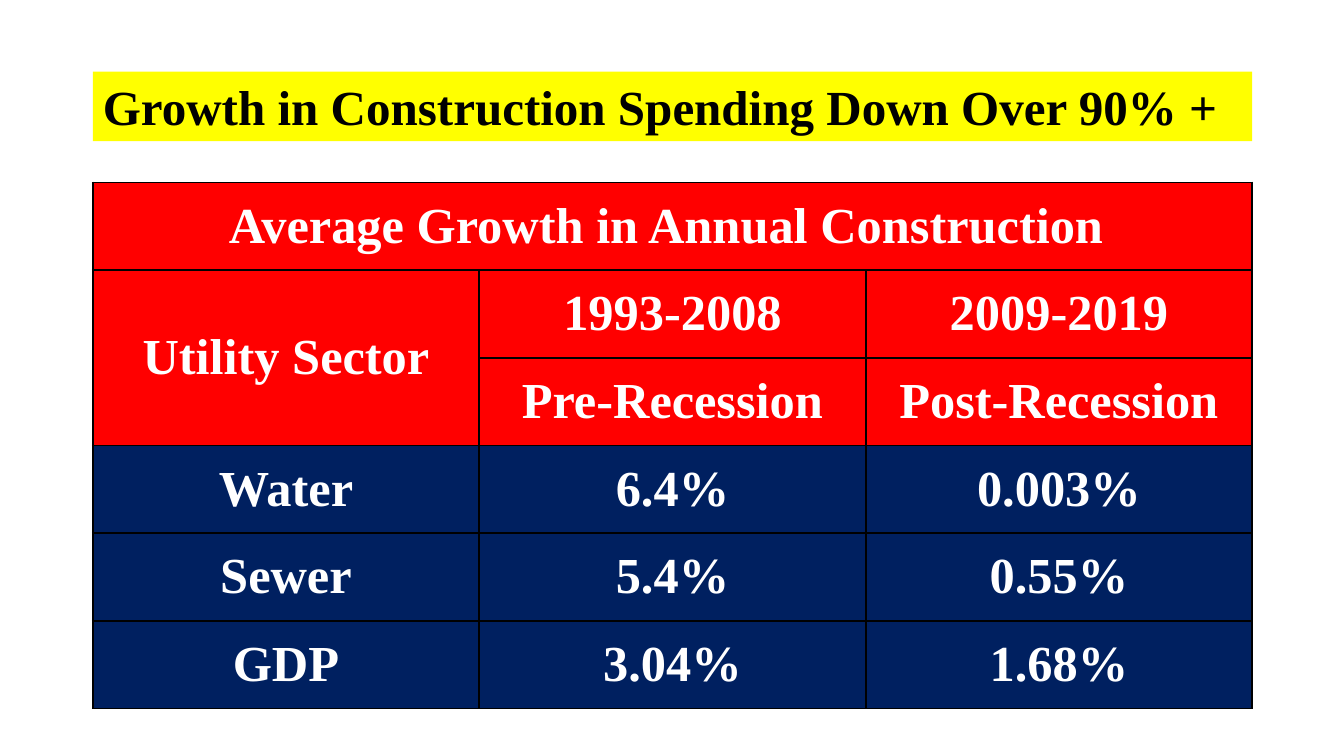
from lxml.etree import SubElement
from pptx import Presentation
from pptx.dml.color import RGBColor
from pptx.enum.text import MSO_ANCHOR, MSO_AUTO_SIZE, PP_ALIGN
from pptx.oxml.ns import qn
from pptx.util import Inches, Pt

COLORS = {"header": "FF0000", "body": "002060", "banner": "FFFF00",
          "light": "FFFFFF", "dark": "000000"}
HEADER_ROWS = 3
ROWS = [
    ["Average Growth in Annual Construction ", "", ""],
    ["Utility Sector", "1993-2008", "2009-2019"],
    ["", "Pre-Recession", "Post-Recession"],
    ["Water", "6.4%", "0.003%"],
    ["Sewer", "5.4%", "0.55%"],
    ["GDP", "3.04%", "1.68%"],
]
MERGES = [((0, 0), (0, 2)), ((1, 0), (2, 0))]


def set_all(target, values):
    for name, value in values.items():
        setattr(target, name, value)


class SlideBuilder:
    font = {"name": "Times New Roman", "bold": True}
    cell_format = {"margin_left": Inches(0.07), "margin_right": Inches(0.07),
                   "margin_top": 0, "margin_bottom": 0,
                   "vertical_anchor": MSO_ANCHOR.MIDDLE}
    title_format = {"word_wrap": True, "auto_size": MSO_AUTO_SIZE.NONE,
                    "vertical_anchor": MSO_ANCHOR.MIDDLE}
    border_width = Pt(1.5)

    def __init__(self, deck):
        self.page = deck.slides.add_slide(deck.slide_layouts.get_by_name("Title Only"))

    def fill(self, target, color):
        target.fill.solid()
        target.fill.fore_color.rgb = RGBColor.from_string(COLORS[color])

    def add_text(self, frame, text, size, color, alignment):
        para = frame.paragraphs[0]
        para.alignment = alignment
        span = para.add_run()
        span.text = text
        set_all(span.font, {**self.font, "size": Pt(size)})
        span.font.color.rgb = RGBColor.from_string(COLORS[color])

    def title(self, text, area):
        box = self.page.shapes.title
        set_all(box, area)
        set_all(box.text_frame, self.title_format)
        self.fill(box, "banner")
        self.add_text(box.text_frame, text, 35, "dark", PP_ALIGN.LEFT)

    def border(self, cell):
        properties = cell._tc.get_or_add_tcPr()
        for side in ("lnL", "lnR", "lnT", "lnB"):
            line = SubElement(properties, qn(f"a:{side}"), w=str(self.border_width))
            paint = SubElement(line, qn("a:solidFill"))
            SubElement(paint, qn("a:srgbClr"), val=COLORS["dark"])

    def table(self, rows, merges, left, top, width, height):
        grid = self.page.shapes.add_table(len(rows), len(rows[0]),
                                          left, top, width, height).table
        set_all(grid, {"first_row": False, "horz_banding": False})
        for r, row in enumerate(rows):
            for c, text in enumerate(row):
                cell = grid.cell(r, c)
                set_all(cell, self.cell_format)
                self.border(cell)
                self.fill(cell, "header" if r < HEADER_ROWS else "body")
                if text:
                    self.add_text(cell.text_frame, text, 36, "light", PP_ALIGN.CENTER)
        for first, last in merges:
            grid.cell(*first).merge(grid.cell(*last))


def main():
    deck = Presentation()
    set_all(deck, {"slide_width": Inches(13.33), "slide_height": Inches(7.5)})
    column = {"left": Inches(0.92), "width": Inches(11.5)}
    builder = SlideBuilder(deck)
    builder.title("Growth in Construction Spending Down Over 90% +",
                  {**column, "top": Inches(0.71), "height": Inches(0.69)})
    builder.table(ROWS, MERGES, **column, top=Inches(1.81), height=Inches(5.22))
    deck.save("out.pptx")


if __name__ == "__main__":
    main()
